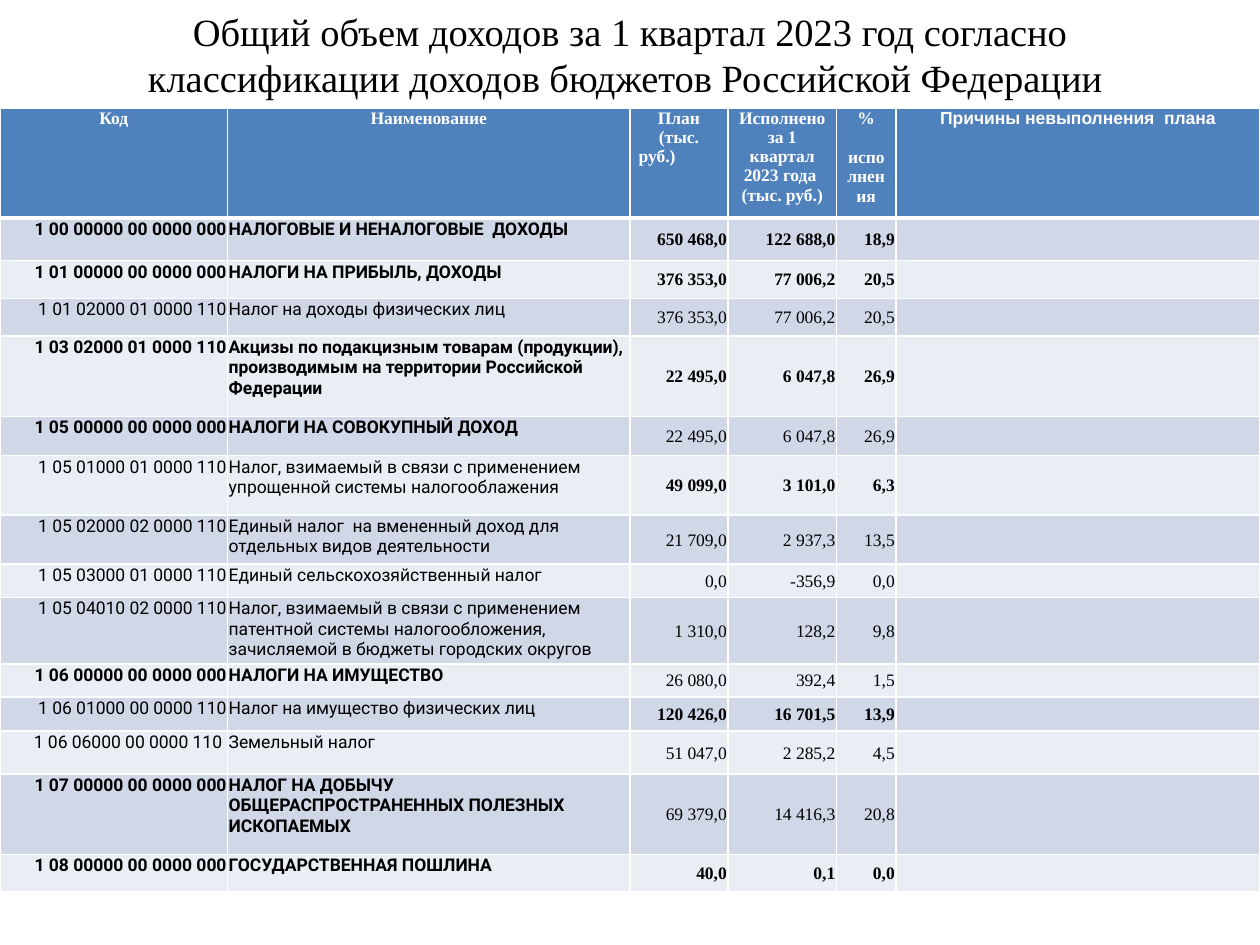
from lxml import etree
from pptx import Presentation
from pptx.dml.color import RGBColor
from pptx.enum import text as t
from pptx.oxml.ns import qn
from pptx.util import Pt

SERIF, SANS = "Times New Roman", "Roboto"
LEFT, MID, RIGHT = t.PP_ALIGN.LEFT, t.PP_ALIGN.CENTER, t.PP_ALIGN.RIGHT
WHITE, BLACK, BLUE = "FFFFFF", "000000", "4F81BD"
BANDS = ["D0D8E8", "E9EDF4"]

TITLE = ("Общий объем доходов за 1 квартал 2023 год согласно "
         "классификации доходов бюджетов Российской Федерации ")
COLS = [130, 230, 56, 62, 34, 208]
HEAD_HIGH = 62.5
HEADS = [
    [("Код", {})],
    [("Наименование", {})],
    [("План", {}), ("(тыс.", {}), ("руб.)", {"align": LEFT})],
    [("Исполнено за 1 квартал 2023 года ", {}), ("(тыс. руб.)", {})],
    [("%", {}), ("исполнения", {"before": 11.5})],
    [("Причины невыполнения  плана", {"font": "Arial"})],
]
# height, bold label, bold values, code, name, plan, done, percent
ROWS = [
    (24.5, True, True, "1 00 00000 00 0000 000",
     "НАЛОГОВЫЕ И НЕНАЛОГОВЫЕ  ДОХОДЫ", "650 468,0", "122 688,0", "18,9"),
    (21.5, True, True, "1 01 00000 00 0000 000",
     "НАЛОГИ НА ПРИБЫЛЬ, ДОХОДЫ", "376 353,0", "77 006,2", "20,5"),
    (21.5, False, False, "1 01 02000 01 0000 110",
     "Налог на доходы физических лиц", "376 353,0", "77 006,2", "20,5"),
    (46, True, True, "1 03 02000 01 0000 110",
     "Акцизы по подакцизным товарам (продукции), производимым на территории "
     "Российской Федерации", "22 495,0", "6 047,8", "26,9"),
    (22.5, True, False, "1 05 00000 00 0000 000",
     "НАЛОГИ НА СОВОКУПНЫЙ ДОХОД", "22 495,0", "6 047,8", "26,9"),
    (34, False, True, "1 05 01000 01 0000 110",
     "Налог, взимаемый в связи с применением упрощенной системы "
     "налогооблажения", "49 099,0", "3 101,0", "6,3"),
    (28, False, False, "1 05 02000 02 0000 110",
     "Единый налог  на вмененный доход для отдельных видов деятельности",
     "21 709,0", "2 937,3", "13,5"),
    (19, False, False, "1 05 03000 01 0000 110",
     "Единый сельскохозяйственный налог", "0,0", "-356,9", "0,0"),
    (38, False, False, "1 05 04010 02 0000 110",
     "Налог, взимаемый в связи с применением патентной системы "
     "налогообложения, зачисляемой в бюджеты городских округов",
     "1 310,0", "128,2", "9,8"),
    (19, True, False, "1 06 00000 00 0000 000",
     "НАЛОГИ НА ИМУЩЕСТВО", "26 080,0", "392,4", "1,5"),
    (19.5, False, True, "1 06 01000 00 0000 110",
     "Налог на имущество физических лиц", "120 426,0", "16 701,5", "13,9"),
    (24.5, False, False, "1 06 06000 00 0000 110 ",
     "Земельный налог", "51 047,0", "2 285,2", "4,5"),
    (46, True, False, "1 07 00000 00 0000 000",
     "НАЛОГ НА ДОБЫЧУ ОБЩЕРАСПРОСТРАНЕННЫХ ПОЛЕЗНЫХ ИСКОПАЕМЫХ",
     "69 379,0", "14 416,3", "20,8"),
    (21.5, True, True, "1 08 00000 00 0000 000",
     "ГОСУДАРСТВЕННАЯ ПОШЛИНА", "40,0", "0,1", "0,0"),
]


def paint(fmt, color):
    fmt.solid()
    fmt.fore_color.rgb = RGBColor.from_string(color)


def write(para, words, font=SERIF, size=10, bold=False, color=BLACK,
          align=LEFT, before=0):
    para.alignment = align
    para.space_before = Pt(before)
    if not words:
        para._p.get_or_add_endParaRPr().set("sz", str(size * 100))
        return
    run = para.add_run()
    run.text = words
    run.font.name, run.font.size, run.font.bold = font, Pt(size), bold
    paint(run.font.fill, color)


def border(cell, **widths):
    props = cell._tc.get_or_add_tcPr()
    for side in "LRTB":
        width = Pt(widths.get(side, 1))
        line = etree.SubElement(props, qn(f"a:ln{side}"), w=str(width))
        fill = etree.SubElement(line, qn("a:solidFill"))
        etree.SubElement(fill, qn("a:srgbClr"), val=WHITE)


def style(cell, fill, side, top, anchor, **widths):
    border(cell, **widths)
    paint(cell.fill, fill)
    cell.margin_left = cell.margin_right = Pt(side)
    cell.margin_top, cell.margin_bottom = Pt(top), 0
    cell.vertical_anchor = anchor


def head(cells):
    for cell, lines in zip(cells, HEADS):
        style(cell, BLUE, 5, 0, t.MSO_ANCHOR.TOP, B=3)
        frame = cell.text_frame
        for i, (words, form) in enumerate(lines):
            para = frame.add_paragraph() if i else frame.paragraphs[0]
            write(para, words, **{"bold": True, "color": WHITE,
                                  "align": MID, **form})


def record(cells, fill, strong, heavy, texts):
    for i, (cell, words) in enumerate(zip(cells, [*texts, ""])):
        label = i < 2
        anchor = t.MSO_ANCHOR.TOP if label else t.MSO_ANCHOR.MIDDLE
        style(cell, fill, 0.7, 0.7, anchor, T=1 if fill else 3)
        write(cell.text_frame.paragraphs[0], words,
              font=SANS if label else SERIF,
              bold=strong if label else heavy,
              align=LEFT if i == 1 else RIGHT)


def table(slide, x, y, w):
    highs = [HEAD_HIGH] + [row[0] for row in ROWS]
    grid = slide.shapes.add_table(len(highs), len(COLS), Pt(x), Pt(y),
                                  Pt(w), Pt(sum(highs))).table
    for col, wide in zip(grid.columns, COLS):
        col.width = Pt(w * wide / sum(COLS))
    for row, high in zip(grid.rows, highs):
        row.height = Pt(high)
    head(grid.rows[0].cells)
    for i, (_, strong, heavy, *texts) in enumerate(ROWS):
        record(grid.rows[i + 1].cells, BANDS[i % 2], strong, heavy, texts)


def title(slide, x, y, w, h):
    box = slide.shapes.title
    box.left, box.top, box.width, box.height = map(Pt, (x, y, w, h))
    frame = box.text_frame
    frame.word_wrap = True
    frame.auto_size = t.MSO_AUTO_SIZE.NONE
    frame.vertical_anchor = t.MSO_ANCHOR.MIDDLE
    write(frame.paragraphs[0], TITLE, size=22, align=MID)


def main():
    deck = Presentation()
    deck.slide_width, deck.slide_height = Pt(720), Pt(540)
    slide = deck.slides.add_slide(deck.slide_layouts[5])
    title(slide, 36, 0, 648, 62)
    table(slide, 0, 62, 720)
    deck.save("out.pptx")


if __name__ == "__main__":
    main()
